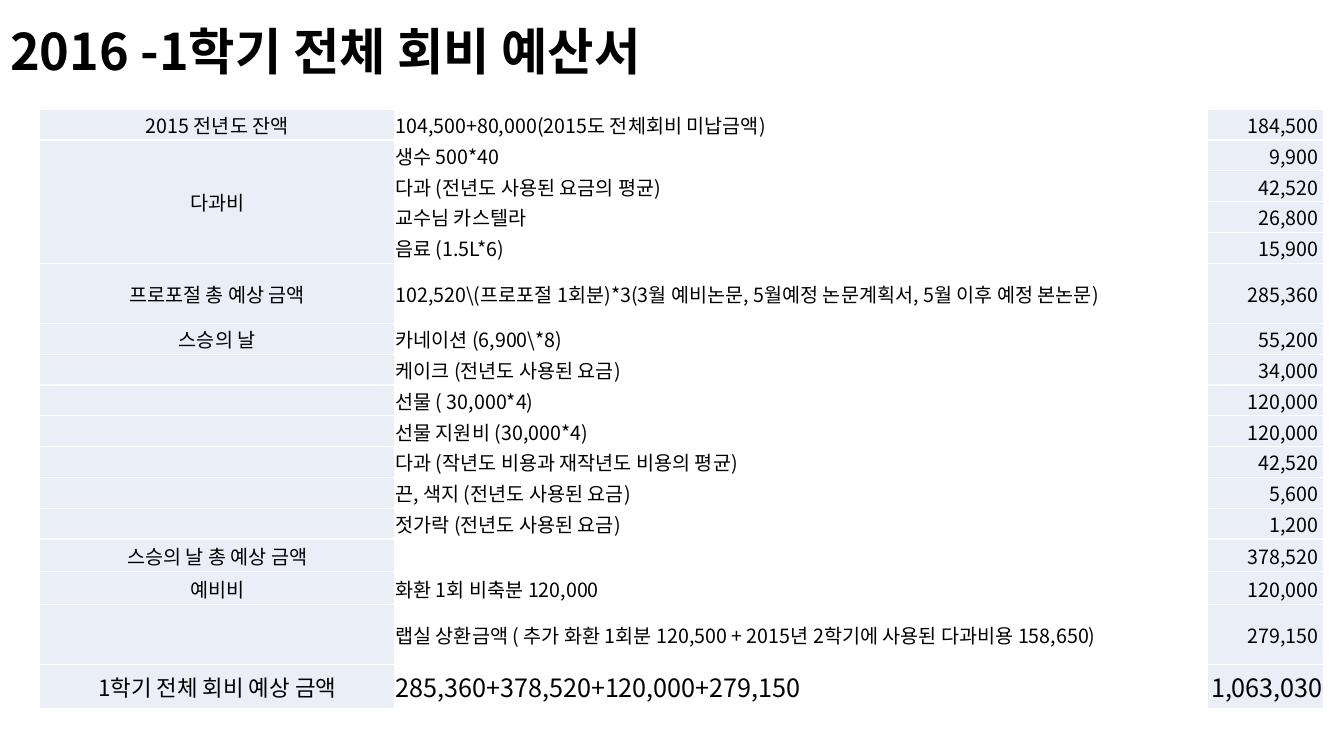
"""Build the semester membership fee budget slide."""
from dataclasses import dataclass

from lxml.etree import SubElement
from pptx import Presentation
from pptx.dml.color import RGBColor
from pptx.enum.text import MSO_ANCHOR, PP_ALIGN
from pptx.oxml import parse_xml
from pptx.oxml.ns import nsdecls, qn
from pptx.util import Pt

TITLE = "2016 -1학기 전체 회비 예산서"
ROWS = [
    ("2015 전년도 잔액", "104,500+80,000(2015도 전체회비 미납금액)", 184500),
    ("다과비", "생수 500*40", 9900),
    ("", "다과 (전년도 사용된 요금의 평균)", 42520),
    ("", "교수님 카스텔라", 26800),
    ("", "음료 (1.5L*6)", 15900),
    ("프로포절 총 예상 금액",
     r"102,520\(프로포절 1회분)*3(3월 예비논문, 5월예정 논문계획서, 5월 이후 예정 본논문)",
     285360),
    ("스승의 날", r"카네이션 (6,900\*8)", 55200),
    ("", "케이크 (전년도 사용된 요금)", 34000),
    ("", "선물 ( 30,000*4)", 120000),
    ("", "선물 지원비 (30,000*4)", 120000),
    ("", "다과 (작년도 비용과 재작년도 비용의 평균)", 42520),
    ("", "끈, 색지 (전년도 사용된 요금)", 5600),
    ("", "젓가락 (전년도 사용된 요금)", 1200),
    ("스승의 날 총 예상 금액", "", 378520),
    ("예비비", "화환 1회 비축분 120,000", 120000),
    ("",
     "랩실 상환금액 ( 추가 화환 1회분 120,500 + 2015년 2학기에 사용된 다과비용 158,650)",
     279150),
    ("1학기 전체 회비 예상 금액", "285,360+378,520+120,000+279,150", 1063030),
]
SNACKS = (1, 4)
WIDTHS = (507, 1161, 166)
HEIGHT = 44
TALL = {5: 86, 13: 47, 14: 47, 15: 86, 16: 62}
LEFT, TOP = 57, 156
HEAD = (0, 0, 1070, 156)
PAGE = (1920, 1080)
SCALE = 6350


@dataclass(frozen=True)
class Theme:
    """Font, colours and type sizes."""
    font: str = "Noto Sans CJK KR"
    ink: str = "000000"
    tint: str = "EAEFF7"
    white: str = "FFFFFF"
    title: int = 36
    body: int = 14
    total: tuple = (16, 18, 18)


THEME = Theme()
FILLS = (THEME.tint, THEME.white, THEME.tint)
ALIGNS = (PP_ALIGN.CENTER, PP_ALIGN.LEFT, PP_ALIGN.RIGHT)


def px(count):
    """Turn px into EMU."""
    return count * SCALE


def write(para, text, size, bold=False):
    """Add one styled run, or size the line when there is no text."""
    if not text:
        SubElement(para._p, qn("a:endParaRPr"), sz=str(size * 100))
        return
    run = para.add_run()
    run.text = text
    font = run.font
    font.name, font.size, font.bold = THEME.font, Pt(size), bold
    font.color.rgb = RGBColor.from_string(THEME.ink)
    SubElement(font._element, qn("a:ea"), typeface=THEME.font)


def edge(cell):
    """Give a cell thin white borders."""
    props = cell._tc.get_or_add_tcPr()
    for spot, side in enumerate("LRTB"):
        props.insert(spot, parse_xml(
            f'<a:ln{side} {nsdecls("a")} w="12700"><a:solidFill>'
            f'<a:srgbClr val="{THEME.white}"/></a:solidFill></a:ln{side}>'))


def dress(cell, text, size, col):
    """Fill, border and write one cell."""
    cell.fill.solid()
    cell.fill.fore_color.rgb = RGBColor.from_string(FILLS[col])
    edge(cell)
    cell.margin_left = cell.margin_right = cell.margin_top = px(1)
    cell.margin_bottom = 0
    cell.vertical_anchor = MSO_ANCHOR.MIDDLE
    para = cell.text_frame.paragraphs[0]
    para.alignment = ALIGNS[col]
    write(para, text, size)


def add_title(slide):
    """Place and write the title."""
    title = slide.shapes.title
    title.left, title.top, title.width, title.height = map(px, HEAD)
    frame = title.text_frame
    frame.word_wrap = True
    frame.vertical_anchor = MSO_ANCHOR.MIDDLE
    para = frame.paragraphs[0]
    para.alignment = PP_ALIGN.LEFT
    para.line_spacing = 0.9
    write(para, TITLE, THEME.title, True)


def add_budget(slide):
    """Build the budget table."""
    highs = [TALL.get(row, HEIGHT) for row in range(len(ROWS))]
    table = slide.shapes.add_table(
        len(ROWS), len(WIDTHS), px(LEFT), px(TOP),
        px(sum(WIDTHS)), px(sum(highs))).table
    table.first_row = table.horz_banding = False
    for col, width in enumerate(WIDTHS):
        table.columns[col].width = px(width)
    for row, (group, item, cost) in enumerate(ROWS):
        table.rows[row].height = px(highs[row])
        last = row == len(ROWS) - 1
        sizes = THEME.total if last else (THEME.body,) * len(WIDTHS)
        for col, text in enumerate((group, item, f"{cost:,} ")):
            dress(table.cell(row, col), text, sizes[col], col)
    first, final = SNACKS
    table.cell(first, 0).merge(table.cell(final, 0))


def main():
    """Make and save the slide."""
    deck = Presentation()
    deck.slide_width, deck.slide_height = map(px, PAGE)
    slide = deck.slides.add_slide(deck.slide_layouts[5])
    add_title(slide)
    add_budget(slide)
    deck.save("out.pptx")


if __name__ == "__main__":
    main()
